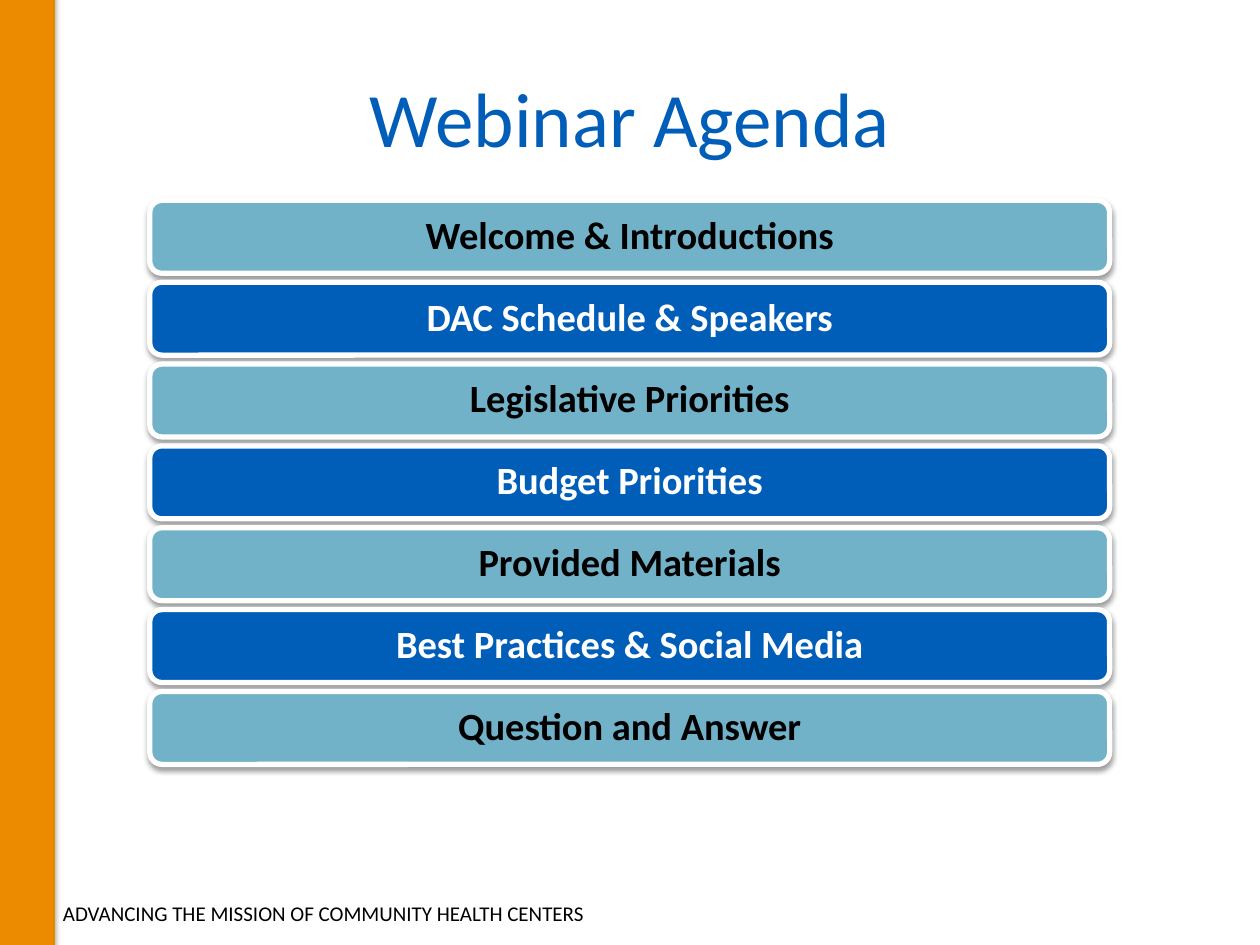
from lxml.etree import SubElement
from pptx import Presentation
from pptx.dml.color import RGBColor
from pptx.enum.shapes import MSO_SHAPE
from pptx.enum.text import MSO_ANCHOR, PP_ALIGN
from pptx.oxml.ns import qn
from pptx.util import Cm, Pt

ORANGE = RGBColor(0xED, 0x8B, 0x00)
DARK_ORANGE = RGBColor(0xE8, 0x88, 0x00)
BLUE = RGBColor(0x00, 0x5E, 0xB8)
TEAL = RGBColor(0x71, 0xB2, 0xC9)
BLACK = RGBColor(0x00, 0x00, 0x00)
WHITE = RGBColor(0xFF, 0xFF, 0xFF)

FONT = "Calibri"
AGENDA = [
    "Welcome & Introductions",
    "DAC Schedule & Speakers",
    "Legislative Priorities",
    "Budget Priorities",
    "Provided Materials",
    "Best Practices & Social Media",
    "Question and Answer",
]
AGENDA_TOP = 4.04
AGENDA_PITCH = 1.65


def place(shape, left, top, width, height):
    shape.left, shape.top = Cm(left), Cm(top)
    shape.width, shape.height = Cm(width), Cm(height)


def write(shape, text, size, color, bold=False, align=PP_ALIGN.CENTER):
    para = shape.text_frame.paragraphs[0]
    para.text = text
    para.alignment = align
    para.font.name = FONT
    para.font.size = Pt(size)
    para.font.bold = bold
    para.font.color.rgb = color
    return para


def add_shadow(shape, distance, opacity):
    shape.shadow.inherit = False
    effects = shape._element.spPr.find(qn("a:effectLst"))
    shadow = SubElement(effects, qn("a:outerShdw"), blurRad=str(Pt(3.1)),
                        dist=str(Pt(distance)), dir="5400000", rotWithShape="0")
    color = SubElement(shadow, qn("a:srgbClr"), val=str(BLACK))
    SubElement(color, qn("a:alpha"), val=str(opacity * 1000))


def add_panel(page, kind, bounds, fill, line, line_width):
    panel = page.shapes.add_shape(kind, *map(Cm, bounds))
    panel.fill.solid()
    panel.fill.fore_color.rgb = fill
    panel.line.color.rgb = line
    panel.line.width = Pt(line_width)
    return panel


def add_side_bar(page):
    bar = add_panel(page, MSO_SHAPE.RECTANGLE, (-0.18, -0.23, 1.27, 20.8),
                    ORANGE, DARK_ORANGE, 0.75)
    add_shadow(bar, 1.8, 35)


def add_tagline(page, text):
    box = page.shapes.add_textbox(Cm(1.27), Cm(17.65), Cm(12.14), Cm(1.02))
    frame = box.text_frame
    frame.word_wrap = False
    frame.vertical_anchor = MSO_ANCHOR.BOTTOM
    frame.margin_left = frame.margin_right = frame.margin_bottom = 0
    frame.margin_top = Cm(0.5)
    write(box, text, 12, BLACK, align=PP_ALIGN.LEFT)


def format_title(page, text):
    title = page.shapes.title
    place(title, 1.27, 0.76, 22.86, 3.18)
    title.text_frame.vertical_anchor = MSO_ANCHOR.MIDDLE
    write(title, text, 44, BLUE)


def add_agenda_item(page, index, text):
    fill, color = (BLUE, WHITE) if index % 2 else (TEAL, BLACK)
    top = AGENDA_TOP + index * AGENDA_PITCH
    item = add_panel(page, MSO_SHAPE.ROUNDED_RECTANGLE, (3.02, top, 19.35, 1.47),
                     fill, WHITE, 3)
    add_shadow(item, 1.6, 38)
    item.text_frame.word_wrap = True
    item.text_frame.vertical_anchor = MSO_ANCHOR.MIDDLE
    para = write(item, text, 22, color, bold=True)
    para.line_spacing = 0.9


def main():
    deck = Presentation()
    deck.slide_width, deck.slide_height = Cm(25.4), Cm(19.05)
    page = deck.slides.add_slide(deck.slide_layouts[5])
    add_tagline(page, "ADVANCING THE MISSION OF COMMUNITY HEALTH CENTERS")
    add_side_bar(page)
    format_title(page, "Webinar Agenda")
    for index, text in enumerate(AGENDA):
        add_agenda_item(page, index, text)
    deck.save("out.pptx")


if __name__ == "__main__":
    main()
